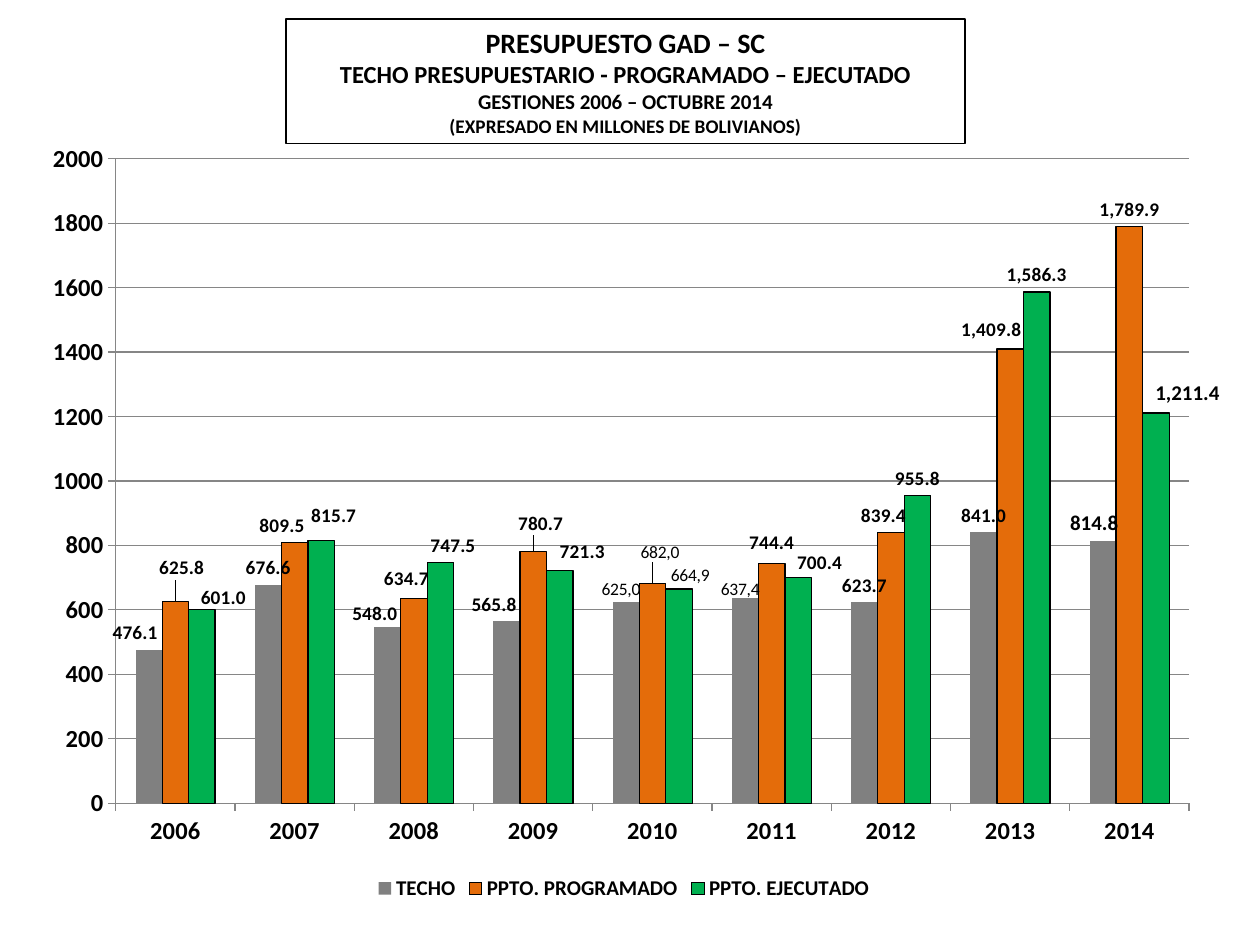
import pptx
import pptx.chart.data
import pptx.dml.color
import pptx.enum.chart
import pptx.enum.text
import pptx.oxml
import pptx.util
from pptx.oxml.ns import nsdecls

Inches, Pt = pptx.util.Inches, pptx.util.Pt
Enum = pptx.enum.chart
FONT = "Calibri"
BLACK, GRID = "000000", "868686"
FORMAT = "#,##0.0"

HEADING = [
    ("PRESUPUESTO GAD – SC", 16),
    ("TECHO PRESUPUESTARIO - PROGRAMADO – EJECUTADO", 14),
    ("GESTIONES 2006 – OCTUBRE 2014", 12),
    ("(EXPRESADO EN MILLONES DE BOLIVIANOS)", 11),
]
YEARS = [str(year) for year in range(2006, 2015)]
SERIES = [
    {"name": "TECHO", "fill": "808080", "line": None,
     "values": [476.1, 676.6, 548, 565.8, 625, 637.4, 623.7, 841, 814.8],
     "shifts": {0: (-0.11, 0), 2: (-0.1, 0.03), 3: (-0.1, 0.01), 4: (-0.04, 0.02),
                5: (-0.04, 0.05), 8: (-0.07, 0)},
     "texts": {4: "625,0", 5: "637,4"}, "sizes": {8: 12}},
    {"name": "PPTO. PROGRAMADO", "fill": "E46C0A", "line": BLACK,
     "values": [625.8, 809.5, 634.7, 780.7, 682, 744.4, 839.4, 1409.8, 1789.9],
     "shifts": {0: (0.05, -0.13), 1: (-0.1, 0), 2: (-0.06, -0.02), 3: (0.06, -0.09),
                4: (0.06, -0.13), 5: (0, -0.03), 6: (-0.06, 0), 7: (-0.15, -0.02)},
     "texts": {4: "682,0"}, "sizes": {}},
    {"name": "PPTO. EJECUTADO", "fill": "00B050", "line": BLACK,
     "values": [601, 815.7, 747.5, 721.3, 664.9, 700.4, 955.8, 1586.3, 1211.4],
     "shifts": {0: (0.17, 0.04), 1: (0.1, -0.06), 2: (0.1, 0), 3: (0.18, -0.02),
                4: (0.09, 0.01), 5: (0.17, 0.02), 8: (0.25, -0.02)},
     "texts": {4: "664,9"}, "sizes": {8: 12}},
]
LEFT, TOP, WIDTH, HEIGHT = 0.23, 1.02, 9.45, 6.17


def color(value):
    return pptx.dml.color.RGBColor.from_string(value)


def style(font, size, bold=True):
    font.name, font.size, font.bold = FONT, Pt(size), bold
    font.color.rgb = color(BLACK)


def write(para, text, size, bold=True, align=None):
    run = para.add_run()
    run.text = text
    style(run.font, size, bold)
    para.alignment = align


def outline(line, value, width=0.75):
    line.color.rgb = color(value)
    line.width = Pt(width)


def layout(x, y, extra=""):
    return pptx.oxml.parse_xml(
        f'<c:layout {nsdecls("c")}><c:manualLayout>{extra}'
        f'<c:x val="{x:.4f}"/><c:y val="{y:.4f}"/></c:manualLayout></c:layout>')


def set_plot(chart, x, y, w, h):
    area = chart._chartSpace.chart.plotArea
    for old in area.xpath("c:layout"):
        area.remove(old)
    node = layout(x, y, '<c:layoutTarget val="inner"/><c:xMode val="edge"/>'
                        '<c:yMode val="edge"/>')
    for tag, size in (("w", w), ("h", h)):
        node[0].append(pptx.oxml.parse_xml(f'<c:{tag} {nsdecls("c")} val="{size}"/>'))
    area.insert(0, node)


def set_labels(series, item):
    labels = series.data_labels
    labels.show_value = True
    labels.number_format, labels.number_format_is_linked = FORMAT, False
    labels.position = Enum.XL_LABEL_POSITION.OUTSIDE_END
    style(labels.font, 11)
    for index, (dx, dy) in item["shifts"].items():
        label = series.points[index].data_label
        if index in item["texts"]:
            write(label.text_frame.paragraphs[0], item["texts"][index], 10, bold=False)
        else:
            style(label.font, item["sizes"].get(index, 11))
        label.position = Enum.XL_LABEL_POSITION.OUTSIDE_END
        node = labels._element.xpath(f'c:dLbl[c:idx/@val="{index}"]')[0]
        node.insert(1, layout(dx / WIDTH, dy / HEIGHT))


def add_budget(slide):
    data = pptx.chart.data.CategoryChartData(number_format=FORMAT)
    data.categories = YEARS
    for item in SERIES:
        data.add_series(item["name"], item["values"])
    frame = slide.shapes.add_chart(
        Enum.XL_CHART_TYPE.COLUMN_CLUSTERED, Inches(LEFT), Inches(TOP),
        Inches(WIDTH), Inches(HEIGHT), data)
    chart = frame.chart
    chart.has_title = False
    style(chart.font, 10, bold=False)
    set_plot(chart, 0.073, 0.039, 0.902, 0.829)

    plot = chart.plots[0]
    plot.gap_width, plot.overlap = 150, 0
    plot.vary_by_categories = False
    for series, item in zip(plot.series, SERIES):
        series.format.fill.solid()
        series.format.fill.fore_color.rgb = color(item["fill"])
        series.invert_if_negative = False
        if item["line"]:
            outline(series.format.line, item["line"])
        set_labels(series, item)

    for axis in (chart.category_axis, chart.value_axis):
        style(axis.tick_labels.font, 14)
        axis.major_tick_mark = Enum.XL_TICK_MARK.OUTSIDE
        outline(axis.format.line, GRID)
    axis = chart.value_axis
    axis.minimum_scale, axis.maximum_scale, axis.major_unit = 0, 2000, 200
    axis.tick_labels.number_format = "0"
    axis.tick_labels.number_format_is_linked = False
    axis.has_major_gridlines = True
    outline(axis.major_gridlines.format.line, GRID)

    chart.has_legend = True
    chart.legend.position = Enum.XL_LEGEND_POSITION.BOTTOM
    chart.legend.include_in_layout = False
    style(chart.legend.font, 12)


def set_heading(title):
    title.left, title.top = Inches(2.27), Inches(0.15)
    title.width, title.height = Inches(5.39), Inches(0.99)
    outline(title.line, BLACK)
    frame = title.text_frame
    frame.word_wrap = True
    frame.auto_size = pptx.enum.text.MSO_AUTO_SIZE.NONE
    frame.vertical_anchor = pptx.enum.text.MSO_ANCHOR.MIDDLE
    for index, (text, size) in enumerate(HEADING):
        para = frame.add_paragraph() if index else frame.paragraphs[0]
        para.line_spacing, para.space_before = 1.0, Pt(0)
        write(para, text, size, align=pptx.enum.text.PP_ALIGN.CENTER)


def main():
    deck = pptx.Presentation()
    deck.slide_width, deck.slide_height = Inches(10), Inches(7.5)
    slide = deck.slides.add_slide(deck.slide_layouts[5])
    set_heading(slide.shapes.title)
    add_budget(slide)
    deck.save("out.pptx")


if __name__ == "__main__":
    main()
